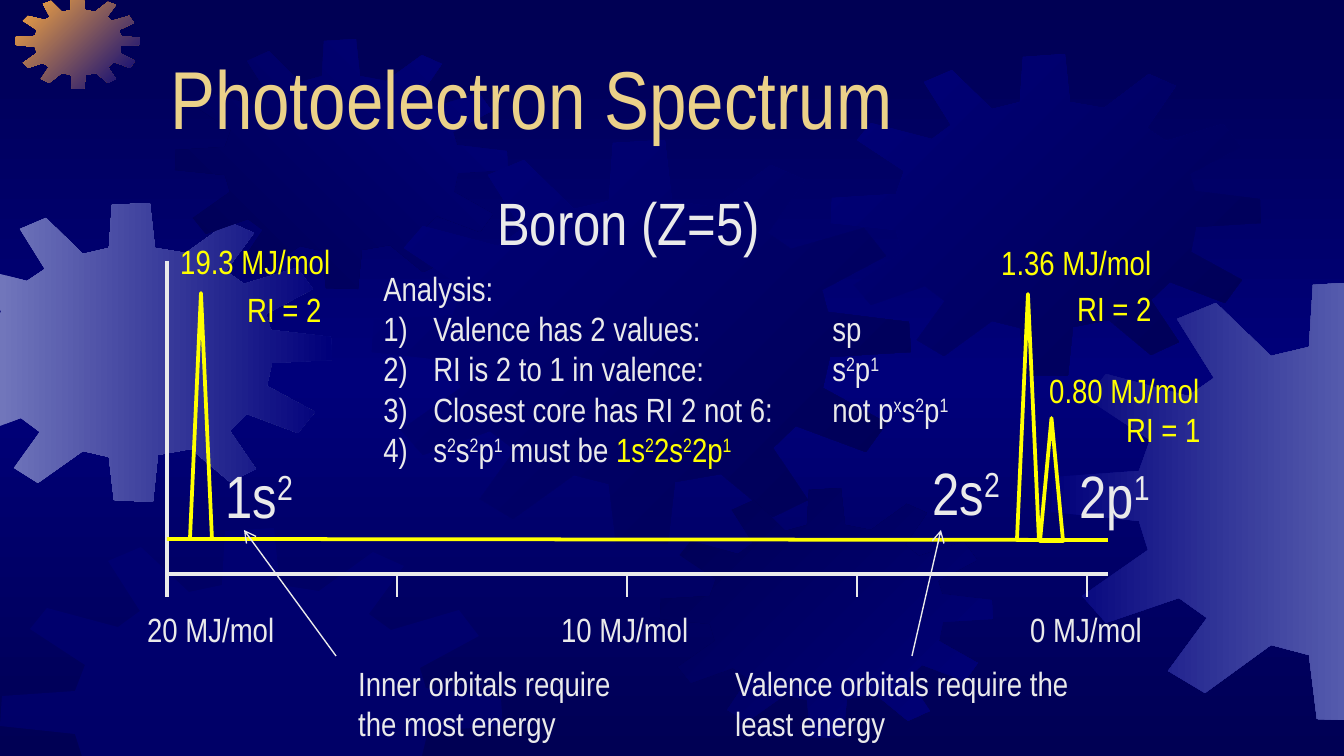
from copy import deepcopy
from dataclasses import dataclass

from lxml import etree
from pptx import Presentation
from pptx.dml.color import RGBColor
from pptx.enum.shapes import MSO_CONNECTOR, MSO_SHAPE
from pptx.enum.text import MSO_ANCHOR, MSO_AUTO_SIZE
from pptx.oxml.ns import qn
from pptx.util import Emu, Pt

STRAIGHT = MSO_CONNECTOR.STRAIGHT
TRIANGLE = MSO_SHAPE.ISOSCELES_TRIANGLE
TOP, MIDDLE = MSO_ANCHOR.TOP, MSO_ANCHOR.MIDDLE
GROW = MSO_AUTO_SIZE.SHAPE_TO_FIT_TEXT

SCALE = 914400 / 134.4  # EMU per px
WIDTH, HEIGHT = 1344, 756

# Outline of a cogwheel on a 320 x 240 grid
COG = [
    (203, 40), (178, 36), (174, 0), (143, 2), (141, 36), (120, 41), (90, 12), (69, 21),
    (89, 53), (75, 63), (30, 51), (19, 64), (54, 87), (48, 104), (1, 107), (0, 126),
    (48, 131), (53, 147), (17, 172), (30, 187), (70, 173), (85, 184), (64, 213), (84, 225),
    (120, 199), (141, 204), (145, 239), (176, 240), (180, 203), (207, 198), (238, 224),
    (259, 214), (238, 183), (252, 170), (293, 185), (306, 168), (268, 147), (272, 129),
    (320, 126), (319, 108), (271, 102), (267, 89), (305, 69), (292, 52), (249, 65),
    (235, 55), (257, 24), (237, 15),
]
COG_WIDTH = 320


@dataclass(frozen=True)
class Theme:
    font: str = "Arial Narrow"
    dark: str = "000054"
    blue: str = "00007A"
    lilac: str = "7176BB"
    violet: str = "555BAD"
    orange: str = "FCAB40"
    gold: str = "EBD189"
    pale: str = "EAEAEA"
    yellow: str = "FFFF00"
    title: int = 44
    large: int = 32
    body: int = 18


def px(length):
    return Emu(round(length * SCALE))


def color(value):
    return RGBColor.from_string(value)


def assign(target, values):
    for name, value in values.items():
        setattr(target, name, value)


def clip(points, axis, limit, side):
    """Keep the part of a polygon on one side of a slide edge."""
    kept = []
    for start, end in zip(points, points[1:] + points[:1]):
        start_in, end_in = (side * (point[axis] - limit) >= 0 for point in (start, end))
        if start_in:
            kept.append(start)
        if start_in != end_in:
            part = (limit - start[axis]) / (end[axis] - start[axis])
            kept.append(tuple(a + part * (b - a) for a, b in zip(start, end)))
    return kept


class SlideBuilder:
    def __init__(self, slide, theme):
        self.slide, self.theme = slide, theme

    def gradient(self, fill, element, colors, angle):
        fill.gradient()
        stop_list = element.find(".//" + qn("a:gsLst"))
        for _ in colors[2:]:
            stop_list.insert(1, deepcopy(stop_list[0]))
        for index, (stop, value) in enumerate(zip(fill.gradient_stops, colors)):
            stop.position = index / (len(colors) - 1)
            stop.color.rgb = color(value)
        fill.gradient_angle = (360 - angle) % 360

    def cog(self, left, top, width, colors, angle=0):
        ratio = width / COG_WIDTH
        points = [(left + x * ratio, top + y * ratio) for x, y in COG]
        for axis, limit, side in ((0, 0, 1), (0, WIDTH, -1), (1, 0, 1), (1, HEIGHT, -1)):
            points = clip(points, axis, limit, side)
        points = [(round(x), round(y)) for x, y in points]
        builder = self.slide.shapes.build_freeform(*points[0], scale=SCALE)
        builder.add_line_segments(points[1:], close=True)
        shape = builder.convert_to_shape()
        shape.shadow.inherit = False
        shape.line.fill.background()
        if len(colors) > 1:
            self.gradient(shape.fill, shape.element, colors, angle)
        else:
            shape.fill.solid()
            shape.fill.fore_color.rgb = color(colors[0])
            tint = shape.element.spPr.find(".//" + qn("a:srgbClr"))
            etree.SubElement(tint, qn("a:alpha"), val="50000")

    def stroke(self, line, value, weight):
        line.color.rgb = color(value)
        line.width = Pt(weight)

    def line(self, start, end, value, weight, arrow=False):
        connector = self.slide.shapes.add_connector(STRAIGHT, *map(px, start + end))
        self.stroke(connector.line, value, weight)
        properties = connector.element.spPr
        if arrow:
            etree.SubElement(properties.find(qn("a:ln")), qn("a:tailEnd"), type="arrow")
        etree.SubElement(properties, qn("a:effectLst"))

    def peak(self, *frame):
        shape = self.slide.shapes.add_shape(TRIANGLE, *map(px, frame))
        shape.shadow.inherit = False
        shape.fill.background()
        self.stroke(shape.line, self.theme.yellow, 2)

    def add_spans(self, para, text, value, size):
        """Add spans; every second piece between bars is a superscript."""
        for index, piece in enumerate(text.split("|")):
            if not piece:
                continue
            span = para.add_run()
            span.text = piece
            assign(span.font, {"name": self.theme.font, "size": Pt(size)})
            span.font.color.rgb = color(value)
            if index % 2:
                span.font._element.set("baseline", "30000")

    def text(self, frame, text, value=None, size=None, wrap=False, anchor=TOP):
        box = self.slide.shapes.add_textbox(*map(px, frame)).text_frame
        assign(box, {"word_wrap": wrap, "auto_size": GROW, "vertical_anchor": anchor})
        self.add_spans(box.paragraphs[0], text, value or self.theme.pale, size or self.theme.body)
        return box

    def numbered(self, box, spans, indent, tab):
        para = box.add_paragraph()
        properties = para._p.get_or_add_pPr()
        for name, length in {"marL": indent, "indent": -indent}.items():
            properties.set(name, str(px(length)))
        etree.SubElement(properties, qn("a:buFont"), typeface=self.theme.font)
        etree.SubElement(properties, qn("a:buAutoNum"), type="arabicParenR")
        tabs = etree.SubElement(properties, qn("a:tabLst"))
        etree.SubElement(tabs, qn("a:tab"), pos=str(px(tab)), algn="l")
        for text, value in spans:
            self.add_spans(para, text, value, self.theme.body)


def main():
    deck = Presentation()
    assign(deck, {"slide_width": px(WIDTH), "slide_height": px(HEIGHT)})
    theme = Theme()
    page = SlideBuilder(deck.slides.add_slide(deck.slide_layouts[6]), theme)
    pale, yellow = theme.pale, theme.yellow

    # Background and cogwheels
    fill = page.slide.background.fill
    page.gradient(fill, page.slide.element, (theme.dark, theme.blue, theme.dark), 90)
    rising, falling = (theme.dark, theme.blue), (theme.blue, theme.dark)
    for cog in (
        (-66, 203, 398, (theme.lilac, theme.blue), 0),
        (16, -4, 124, (theme.orange, theme.blue), 45),
        (175, 39, 333, rising, 315),
        (372, 140, 539, falling, 45),
        (0, 528, 503, (theme.blue,)),
        (660, 488, 333, rising, 45),
        (831, 54, 430, falling, 45),
        (1051, 281, 586, (theme.blue, theme.violet), 0),
    ):
        page.cog(*cog)

    # Headings
    page.text((157, 34, 1142, 126), "Photoelectron Spectrum", theme.gold, theme.title, True, MIDDLE)
    page.text((484, 179, 293, 86), "Boron (Z=5)", pale, theme.large)

    # Energy axis with ticks and labels
    left, right, axis, tick_end = 167, 1108, 574, 597
    page.line((left, axis), (right, axis), pale, 1.75)
    page.line((left, 261), (left, tick_end), pale, 1.75)
    for index in range(1, 5):
        tick = left + 230 * index
        page.line((tick, axis), (tick, tick_end), pale, 1.5)
    for x, width, label in ((134, 156, "20 MJ/mol"), (548, 156, "10 MJ/mol"), (1017, 140, "0 MJ/mol")):
        page.text((x, 602, width, 54), label)

    # Spectrum line and peaks
    page.line((left, 539), (right, 540), yellow, 2)
    for peak in ((190, 293, 22, 246), (1017, 294, 22, 246), (1040, 418, 23, 123)):
        page.peak(*peak)
    for x, y, label in ((167, 234, "19.3"), (988, 235, "1.36"), (1036, 363, "0.80")):
        page.text((x, y, 179, 54), f"{label} MJ/mol", yellow)
    for x, y, intensity in ((234, 282, 2), (1064, 281, 2), (1113, 402, 1)):
        page.text((x, y, 102, 54), f"RI = {intensity}", yellow)
    for x, y, orbital in ((212, 452, "1s|2"), (919, 449, "2s|2"), (1066, 452, "2p|1")):
        page.text((x, y, 99, 86), orbital, pale, theme.large)

    # Analysis
    box = page.text((370, 261, 602, 218), "Analysis:")
    for spans in (
        [("Valence has 2 values:\tsp", pale)],
        [("RI is 2 to 1 in valence:\ts|2|p|1", pale)],
        [("Closest core has RI 2 not 6:\tnot p|x|s|2|p|1", pale)],
        [("s|2|s|2|p|1| must be ", pale), ("1s|2|2s|2|2p|1", yellow)],
    ):
        page.numbered(box, spans, 50, 449)

    # Remarks with arrows
    page.line((336, 656), (244, 530), pale, 0.75, True)
    page.text((345, 656, 325, 95), "Inner orbitals require the most energy", wrap=True)
    page.line((912, 656), (941, 530), pale, 0.75, True)
    page.text((722, 656, 380, 95), "Valence orbitals require the least energy", wrap=True)

    deck.save("out.pptx")


if __name__ == "__main__":
    main()
